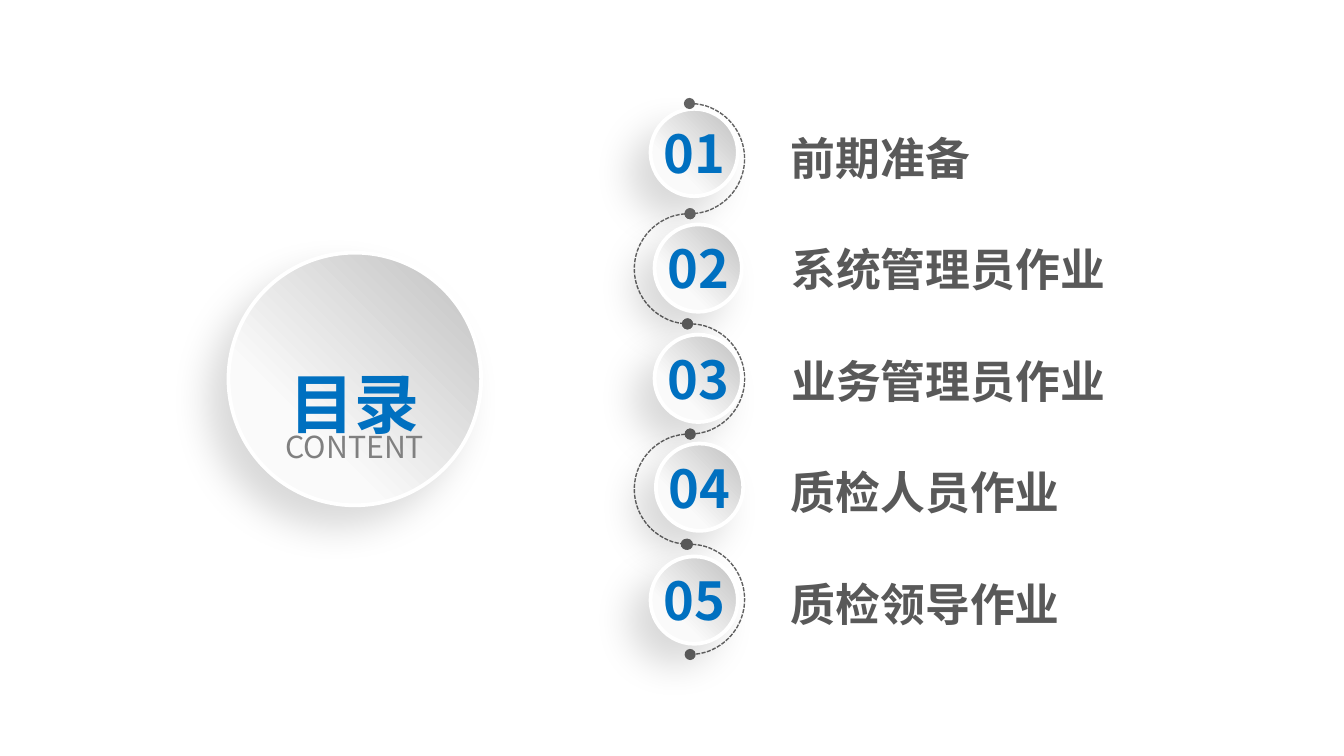
from lxml import etree
from pptx import Presentation
from pptx.dml.color import RGBColor
from pptx.enum import dml, shapes, text
from pptx.oxml import ns
from pptx.util import Inches, Pt

WHITE = RGBColor(0xFF, 0xFF, 0xFF)
SILVER = RGBColor(0xBF, 0xBF, 0xBF)
PALE = RGBColor(0xFA, 0xFA, 0xFA)
BLUE = RGBColor(0x00, 0x70, 0xC0)
GRAY = RGBColor(0x80, 0x80, 0x80)
DARK = RGBColor(0x59, 0x59, 0x59)
TRACK = RGBColor(0x62, 0x62, 0x62)

# circle left, circle top, label, label width, arc start, arc end
ITEMS = [
    (4.84, 0.81, "前期准备", 1.56, 162, 53.57),
    (4.87, 1.67, "系统管理员作业", 2.57, 161.69, 52.82),
    (4.87, 2.49, "业务管理员作业", 2.57, 160.73, 53.57),
    (4.88, 3.30, "质检人员作业", 2.23, 161.53, 52.02),
    (4.84, 4.14, "质检领导作业", 2.23, 160.73, 53.57),
]
STEP = 0.82


def add(parent, tag, **attrs):
    return etree.SubElement(parent, ns.qn(tag), attrs)


class Board:
    font = "Noto Sans CJK SC"

    def __init__(self, slide):
        self.slide = slide

    def shape(self, kind, x, y, size):
        box = [Inches(v) for v in (x, y, size, size)]
        return self.slide.shapes.add_shape(kind, *box)

    def disc(self, x, y, size):
        """Add a shaded circle with a soft shadow to the lower left."""
        disc = self.shape(shapes.MSO_SHAPE.OVAL, x, y, size)
        disc.fill.gradient()
        disc.fill.gradient_angle = 225
        stops = zip(disc.fill.gradient_stops, (0, 0.7), (SILVER, PALE))
        for stop, place, color in stops:
            stop.position = place
            stop.color.rgb = color
        disc.line.color.rgb = WHITE
        disc.line.width = Pt(2)
        disc.shadow.inherit = False
        effects = disc._element.spPr.find(ns.qn("a:effectLst"))
        shade = add(effects, "a:outerShdw", blurRad=str(Pt(20)),
                    dist=str(Pt(15)), dir="8100000", algn="tr",
                    rotWithShape="0")
        black = add(shade, "a:srgbClr", val="000000")
        add(black, "a:alpha", val="15000")

    def arc(self, x, y, start, end, flip):
        arc = self.shape(shapes.MSO_SHAPE.ARC, x, y, STEP)
        arc.adjustments[0] = start
        arc.adjustments[1] = end
        arc.fill.background()
        arc.shadow.inherit = False
        style = {"width": Pt(0.75), "dash_style": dml.MSO_LINE.SQUARE_DOT}
        arc.line.color.rgb = TRACK
        for name, value in style.items():
            setattr(arc.line, name, value)
        props = arc._element.spPr
        if flip:
            props.xfrm.set("flipH", "1")
        for tag in ("a:headEnd", "a:tailEnd"):
            add(props.ln, tag, type="oval")

    def label(self, words, x, y, w, h, size, color, bold=True,
              middle=True, space=None, lift=None):
        """Add one centred line; lift is the baseline shift in percent."""
        box = self.slide.shapes.add_textbox(*map(Inches, (x, y, w, h)))
        frame = box.text_frame
        anchor = text.MSO_ANCHOR.MIDDLE if middle else text.MSO_ANCHOR.TOP
        form = {"word_wrap": False, "vertical_anchor": anchor,
                "auto_size": text.MSO_AUTO_SIZE.SHAPE_TO_FIT_TEXT}
        for name, value in form.items():
            setattr(frame, name, value)
        para = frame.paragraphs[0]
        para.alignment = text.PP_ALIGN.CENTER
        if space:
            para.line_spacing = space
        run = para.add_run()
        run.text = words
        style = {"name": self.font, "size": Pt(size), "bold": bold}
        for name, value in style.items():
            setattr(run.font, name, value)
        run.font.color.rgb = color
        props = run._r.get_or_add_rPr()
        add(props, "a:ea", typeface=self.font)
        if lift:
            props.set("baseline", str(lift * 1000))

    def badge(self, num, x, y):
        self.disc(x, y, 0.65)
        self.label(f"{num:02}", x - 0.02, y + 0.04, 0.69, 0.57, 28, BLUE)


def main():
    deck = Presentation()
    deck.slide_width = Inches(10)
    deck.slide_height = deck.slide_width * 9 // 16
    board = Board(deck.slides.add_slide(deck.slide_layouts[6]))

    board.disc(1.7, 1.88, 1.88)
    board.label("目录", 1.98, 2.21, 1.32, 0.99, 60, BLUE,
                space=1.5, lift=12)
    board.label("CONTENT", 1.91, 2.9, 1.46, 0.57, 28, GRAY, bold=False,
                space=1.5, lift=12)

    # The first badge lies under the track, the others over it.
    board.badge(1, *ITEMS[0][:2])
    for i, (_, _, words, width, start, end) in enumerate(ITEMS):
        board.arc(4.72, 0.77 + i * STEP, start, end, flip=i % 2)
        board.label(words, 5.77, 0.92 + i * 0.83, width, 0.5, 24, DARK,
                    middle=False)
    for num, (x, y, *_) in enumerate(ITEMS[1:], 2):
        board.badge(num, x, y)

    deck.save("out.pptx")


if __name__ == "__main__":
    main()
